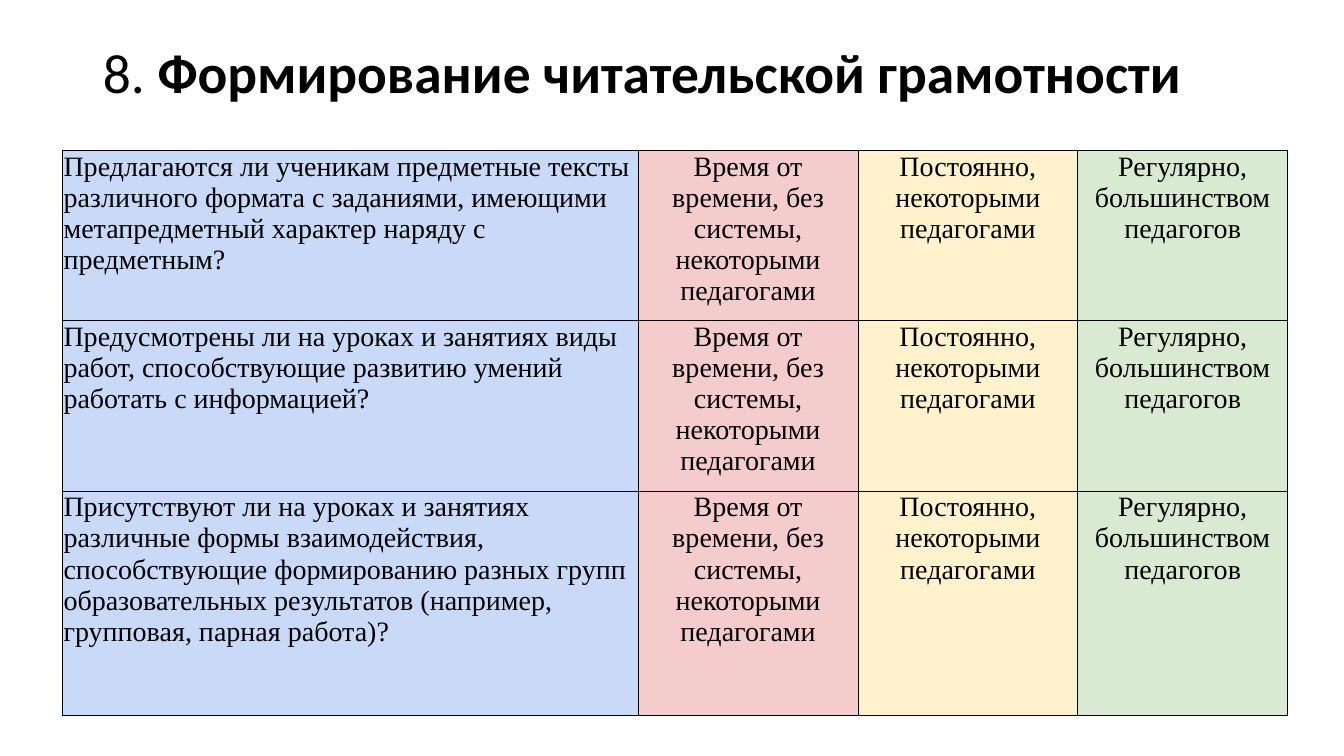
from lxml import etree
from pptx import Presentation
from pptx.dml.color import RGBColor
from pptx.enum.text import MSO_ANCHOR, MSO_AUTO_SIZE, PP_ALIGN
from pptx.oxml.ns import qn
from pptx.util import Inches, Pt

LEFT, CENTER = PP_ALIGN.LEFT, PP_ALIGN.CENTER
MIDDLE, TOP = MSO_ANCHOR.MIDDLE, MSO_ANCHOR.TOP
NO_AUTOFIT = MSO_AUTO_SIZE.NONE

# Content
TITLE_NUMBER = "8. "
TITLE_TEXT = "Формирование читательской грамотности"
QUESTIONS = [
    "Предлагаются ли ученикам предметные тексты различного формата с заданиями, "
    "имеющими метапредметный характер наряду с предметным?",
    "Предусмотрены ли на уроках и занятиях виды работ, способствующие развитию "
    "умений работать с информацией?",
    "Присутствуют ли на уроках и занятиях различные формы взаимодействия, "
    "способствующие формированию разных групп образовательных результатов "
    "(например, групповая, парная работа)?",
]
ANSWERS = [
    "Время от времени, без системы, некоторыми педагогами",
    "Постоянно, некоторыми педагогами",
    "Регулярно, большинством педагогов",
]

# Look
COLORS = {
    "text": "000000",
    "border": "000000",
    "question": "C9DAF8",
    "sometimes": "F4CCCC",
    "constantly": "FFF2CC",
    "regularly": "D9EAD3",
}
COLUMN_FILLS = ["question", "sometimes", "constantly", "regularly"]
COLUMN_WIDTHS = [5.71, 2.18, 2.18, 2.08]
ROW_HEIGHTS = [1.69, 1.69, 2.23]
TABLE_LEFT, TABLE_TOP = 0.62, 1.49
CELL_INSET = Inches(0.01)
BORDER_WIDTH = Pt(0.5)


def color(name):
    return RGBColor.from_string(COLORS[name])


def set_font(font, name, size):
    font.name = name
    font.size = Pt(size)
    font.color.rgb = color("text")


def add_borders(cell):
    properties = cell._tc.get_or_add_tcPr()
    for side in ("a:lnL", "a:lnR", "a:lnT", "a:lnB"):
        line = etree.SubElement(properties, qn(side), w=str(BORDER_WIDTH))
        fill = etree.SubElement(line, qn("a:solidFill"))
        etree.SubElement(fill, qn("a:srgbClr"), val=COLORS["border"])


def fill_cell(cell, text, fill_name, alignment):
    add_borders(cell)
    cell.fill.solid()
    cell.fill.fore_color.rgb = color(fill_name)
    cell.margin_left = cell.margin_right = cell.margin_top = CELL_INSET
    cell.margin_bottom = 0
    cell.vertical_anchor = TOP
    cell.text = text
    paragraph = cell.text_frame.paragraphs[0]
    paragraph.alignment = alignment
    set_font(paragraph.font, "Times New Roman", 20)
    # Table text takes its font from the runs
    set_font(paragraph.runs[0].font, "Times New Roman", 20)


def add_title(slide):
    title = slide.shapes.title
    title.left, title.top = Inches(0.92), Inches(0.4)
    title.width, title.height = Inches(11.5), Inches(0.69)
    frame = title.text_frame
    frame.auto_size = NO_AUTOFIT
    frame.word_wrap = True
    frame.vertical_anchor = MIDDLE
    heading = frame.paragraphs[0]
    heading.alignment = LEFT
    heading.line_spacing = 0.9
    for text, bold in ((TITLE_NUMBER, False), (TITLE_TEXT, True)):
        run = heading.add_run()
        run.text = text
        run.font.bold = bold
        set_font(run.font, "Calibri", 39.6)


def add_answers_table(slide):
    table = slide.shapes.add_table(
        len(QUESTIONS), len(COLUMN_WIDTHS),
        Inches(TABLE_LEFT), Inches(TABLE_TOP),
        Inches(sum(COLUMN_WIDTHS)), Inches(sum(ROW_HEIGHTS)),
    ).table
    table.first_row = table.horz_banding = False
    for column, width in zip(table.columns, COLUMN_WIDTHS):
        column.width = Inches(width)
    for row, height, question in zip(table.rows, ROW_HEIGHTS, QUESTIONS):
        row.height = Inches(height)
        texts = [question] + ANSWERS
        for cell, text, fill_name in zip(row.cells, texts, COLUMN_FILLS):
            alignment = LEFT if fill_name == "question" else CENTER
            fill_cell(cell, text, fill_name, alignment)


def main():
    presentation = Presentation()
    presentation.slide_width = Inches(13.33)
    presentation.slide_height = Inches(7.5)
    slide = presentation.slides.add_slide(presentation.slide_layouts[5])
    add_title(slide)
    add_answers_table(slide)
    presentation.save("out.pptx")


if __name__ == "__main__":
    main()
